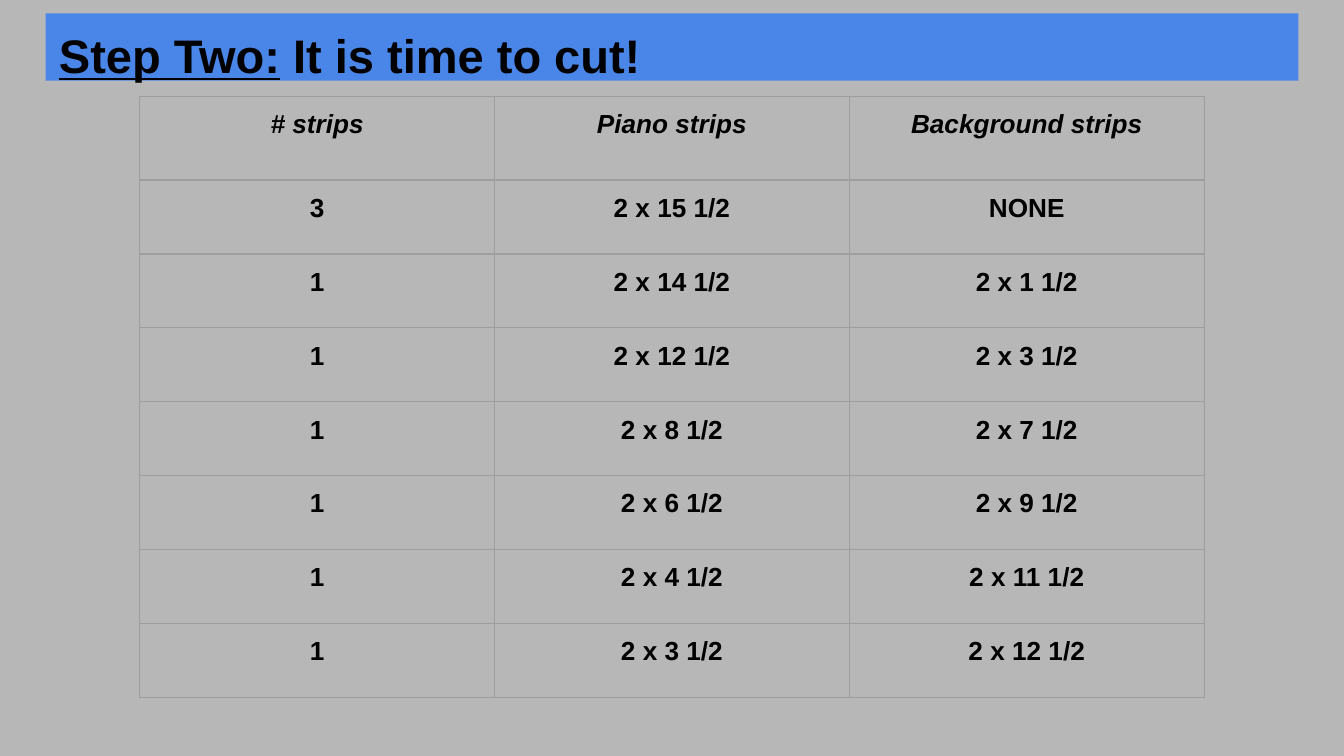
from pptx import Presentation
from pptx.dml.color import RGBColor
from pptx.enum.shapes import MSO_SHAPE as Shape
from pptx.enum.text import MSO_ANCHOR as Anchor, PP_ALIGN as Align
from pptx.oxml import parse_xml
from pptx.oxml.ns import nsdecls
from pptx.util import Inches, Pt

COLORS = {"background": "B7B7B7", "banner": "4A86E8", "text": "000000", "grid": "9E9E9E"}
FONT = "Arial"
SLIDE_W = 10
SLIDE_H = SLIDE_W * 9 / 16
INSET = Inches(0.1)

HEADINGS = ("# strips", "Piano strips", "Background strips")
CUTS = (
    ("3", "2 x 15 1/2", "NONE"),
    ("1", "2 x 14 1/2", "2 x 1 1/2"),
    ("1", "2 x 12 1/2", "2 x 3 1/2"),
    ("1", "2 x 8 1/2", "2 x 7 1/2"),
    ("1", "2 x 6 1/2", "2 x 9 1/2"),
    ("1", "2 x 4 1/2", "2 x 11 1/2"),
    ("1", "2 x 3 1/2", "2 x 12 1/2"),
)


def rgb(role):
    return RGBColor.from_string(COLORS[role])


def set_insets(holder):
    holder.margin_left = holder.margin_right = INSET
    holder.margin_top = holder.margin_bottom = INSET
    holder.vertical_anchor = Anchor.TOP


def add_run(paragraph, text, size, italic=False, underline=False):
    run = paragraph.add_run()
    run.text = text
    font = run.font
    font.name, font.size, font.bold = FONT, Pt(size), True
    font.italic, font.underline = italic, underline
    font.color.rgb = rgb("text")


def add_banner(slide, left, top, width, height):
    banner = slide.shapes.add_shape(Shape.RECTANGLE, *map(Inches, (left, top, width, height)))
    banner.shadow.inherit = False
    banner.fill.solid()
    banner.fill.fore_color.rgb = rgb("banner")
    banner.line.fill.background()
    frame = banner.text_frame
    frame.word_wrap = True
    set_insets(frame)
    title = frame.paragraphs[0]
    title.alignment = Align.LEFT
    add_run(title, "Step Two:", 25.2, underline=True)
    add_run(title, " It is time to cut!", 25.2)


def outline_cell(cell):
    properties = cell._tc.get_or_add_tcPr()
    for position, side in enumerate(("lnL", "lnR", "lnT", "lnB")):
        properties.insert(position, parse_xml(
            f'<a:{side} {nsdecls("a")} w="{Pt(0.75)}"><a:solidFill>'
            f'<a:srgbClr val="{COLORS["grid"]}"/></a:solidFill></a:{side}>'))


def fill_cell(cell, text, italic):
    cell.fill.background()
    set_insets(cell)
    paragraph = cell.text_frame.paragraphs[0]
    paragraph.alignment = Align.CENTER
    add_run(paragraph, text, 14, italic=italic)
    outline_cell(cell)


def add_cutting_table(slide, left, top, width, heading_height, cut_height):
    rows = (HEADINGS, *CUTS)
    height = heading_height + cut_height * len(CUTS)
    table = slide.shapes.add_table(
        len(rows), len(HEADINGS), *map(Inches, (left, top, width, height))).table
    table.first_row = table.horz_banding = False
    for column in table.columns:
        column.width = Inches(width / len(HEADINGS))
    for r, texts in enumerate(rows):
        table.rows[r].height = Inches(cut_height if r else heading_height)
        for c, text in enumerate(texts):
            fill_cell(table.cell(r, c), text, italic=r == 0)


def main():
    deck = Presentation()
    deck.slide_width, deck.slide_height = Inches(SLIDE_W), Inches(SLIDE_H)
    slide = deck.slides.add_slide(deck.slide_layouts[6])
    slide.background.fill.solid()
    slide.background.fill.fore_color.rgb = rgb("background")

    banner_w, table_w = 9.32, 7.92
    add_banner(slide, (SLIDE_W - banner_w) / 2, 0.1, banner_w, 0.5)
    add_cutting_table(slide, (SLIDE_W - table_w) / 2, 0.72, table_w, 0.62, 0.55)
    deck.save("out.pptx")


if __name__ == "__main__":
    main()
